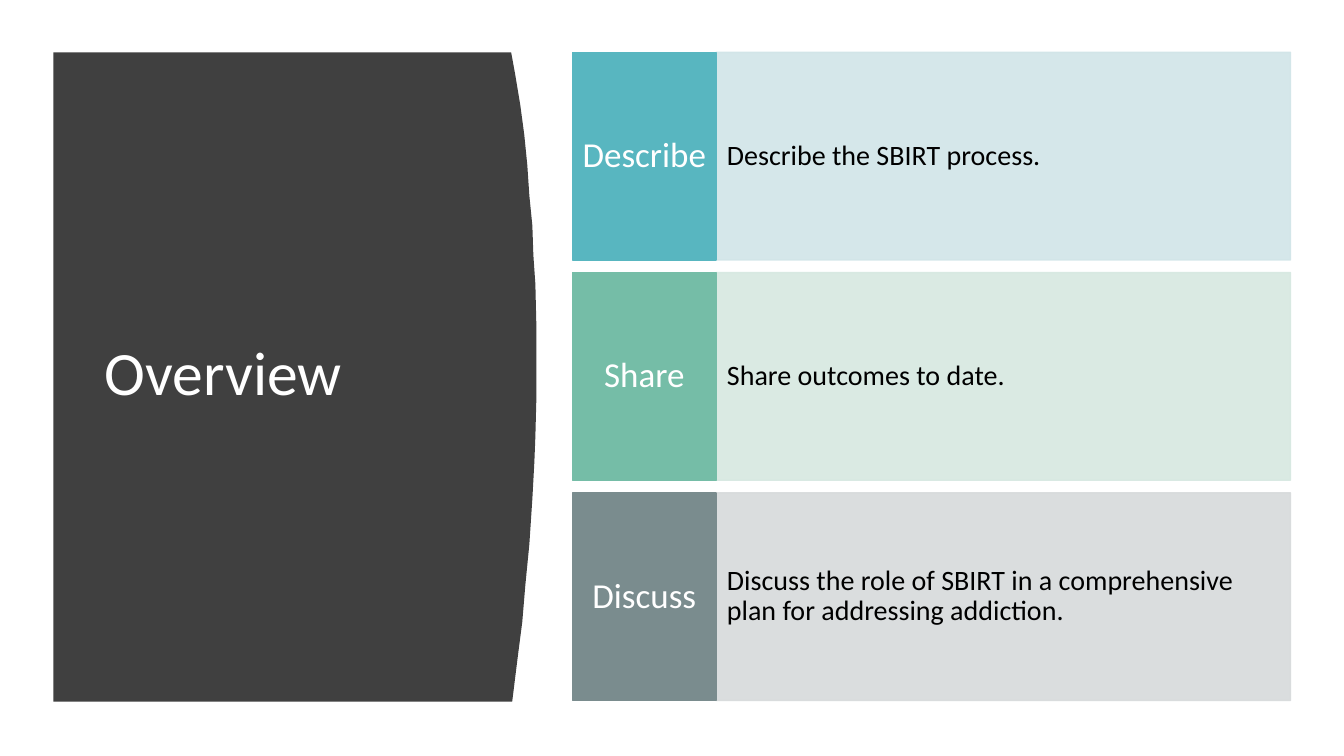
import pptx
import pptx.util
import pptx.dml.color
import pptx.enum.shapes
import pptx.enum.text
import pptx.oxml
import pptx.oxml.ns
from pptx.util import Inches

HEADING = "Overview"
GOALS = [
    ("Describe", "Describe the SBIRT process.", "58B6C0", "D1E5E8"),
    ("Share", "Share outcomes to date.", "75BDA7", "D6E8E1"),
    ("Discuss", "Discuss the role of SBIRT in a comprehensive plan for addressing addiction.",
     "7A8C8E", "D7DADB"),
]
THEME = {
    "font": "Calibri", "panel": "404040", "light": "FFFFFF", "dark": "000000",
    "heading_size": 44, "verb_size": 25, "detail_size": 20, "detail_opacity": 90,
}
PANEL_LEFT, PANEL_TOP, PANEL_BOTTOM = 0.53, 0.52, 6.96
PANEL_CURVE = [
    (5.07, 0.52), (5.11, 0.74), (5.16, 1.04), (5.2, 1.34), (5.23, 1.64), (5.25, 1.94),
    (5.28, 2.24), (5.29, 2.53), (5.31, 2.82), (5.32, 3.25), (5.32, 3.94), (5.31, 4.33),
    (5.3, 4.58), (5.28, 4.95), (5.25, 5.4), (5.21, 5.81), (5.18, 6.17), (5.14, 6.48),
    (5.11, 6.72), (5.08, 6.96),
]
ROW_HEIGHT, ROW_PITCH = 2.06, 2.185
VERB_LEFT, VERB_WIDTH, DETAIL_WIDTH = 5.68, 1.42, 5.7


def rgb(colour):
    return pptx.dml.color.RGBColor.from_string(colour)


def write(shape, text, size, colour, align):
    frame = shape.text_frame
    frame.text = text
    frame.word_wrap = True
    frame.auto_size = pptx.enum.text.MSO_AUTO_SIZE.NONE
    frame.vertical_anchor = pptx.enum.text.MSO_ANCHOR.MIDDLE
    paragraph = frame.paragraphs[0]
    paragraph.alignment = align
    paragraph.line_spacing = 0.9
    paragraph.font.name = THEME["font"]
    paragraph.font.size = pptx.util.Pt(size)
    paragraph.font.color.rgb = rgb(colour)


def paint(shape, colour, opacity=100):
    shape.shadow.inherit = False
    shape.fill.solid()
    shape.fill.fore_color.rgb = rgb(colour)
    shape.line.color.rgb = rgb(colour)
    shape.line.width = pptx.util.Pt(1)
    if opacity < 100:
        for swatch in shape._element.spPr.iter(pptx.oxml.ns.qn("a:srgbClr")):
            alpha = pptx.oxml.parse_xml(
                f'<a:alpha {pptx.oxml.ns.nsdecls("a")} val="{opacity * 1000}"/>')
            swatch.append(alpha)


def add_block(slide, left, top, width, colour, margins, opacity=100):
    block = slide.shapes.add_shape(
        pptx.enum.shapes.MSO_SHAPE.RECTANGLE,
        Inches(left), Inches(top), Inches(width), Inches(ROW_HEIGHT))
    paint(block, colour, opacity)
    frame = block.text_frame
    frame.margin_left = frame.margin_right = Inches(margins[0])
    frame.margin_top = frame.margin_bottom = Inches(margins[1])
    return block


def add_panel(slide):
    outline = slide.shapes.build_freeform(
        Inches(PANEL_LEFT), Inches(PANEL_TOP), scale=1.0)
    corners = PANEL_CURVE + [(PANEL_LEFT, PANEL_BOTTOM)]
    outline.add_line_segments([(Inches(x), Inches(y)) for x, y in corners], close=True)
    panel = outline.convert_to_shape()
    paint(panel, THEME["panel"])
    panel.line.fill.background()


def add_heading(slide):
    heading = slide.shapes.title
    heading.left, heading.top = Inches(0.94), Inches(1.11)
    heading.width, heading.height = Inches(3.73), Inches(5.24)
    write(heading, HEADING, THEME["heading_size"], THEME["light"],
          pptx.enum.text.PP_ALIGN.LEFT)
    slide.shapes._spTree.append(heading._element)


def add_goals(slide):
    for row, (verb, detail, strong, pale) in enumerate(GOALS):
        top = PANEL_TOP + row * ROW_PITCH
        detail_block = add_block(slide, VERB_LEFT + VERB_WIDTH, top, DETAIL_WIDTH, pale,
                                 (0.11, 0.52), THEME["detail_opacity"])
        write(detail_block, detail, THEME["detail_size"], THEME["dark"],
              pptx.enum.text.PP_ALIGN.LEFT)
        verb_block = add_block(slide, VERB_LEFT, top, VERB_WIDTH, strong, (0.08, 0.2))
        write(verb_block, verb, THEME["verb_size"], THEME["light"],
              pptx.enum.text.PP_ALIGN.CENTER)


def main():
    deck = pptx.Presentation()
    deck.slide_width, deck.slide_height = Inches(13.33), Inches(7.5)
    slide = deck.slides.add_slide(deck.slide_layouts.get_by_name("Title Only"))
    add_panel(slide)
    add_heading(slide)
    add_goals(slide)
    deck.save("out.pptx")


if __name__ == "__main__":
    main()
